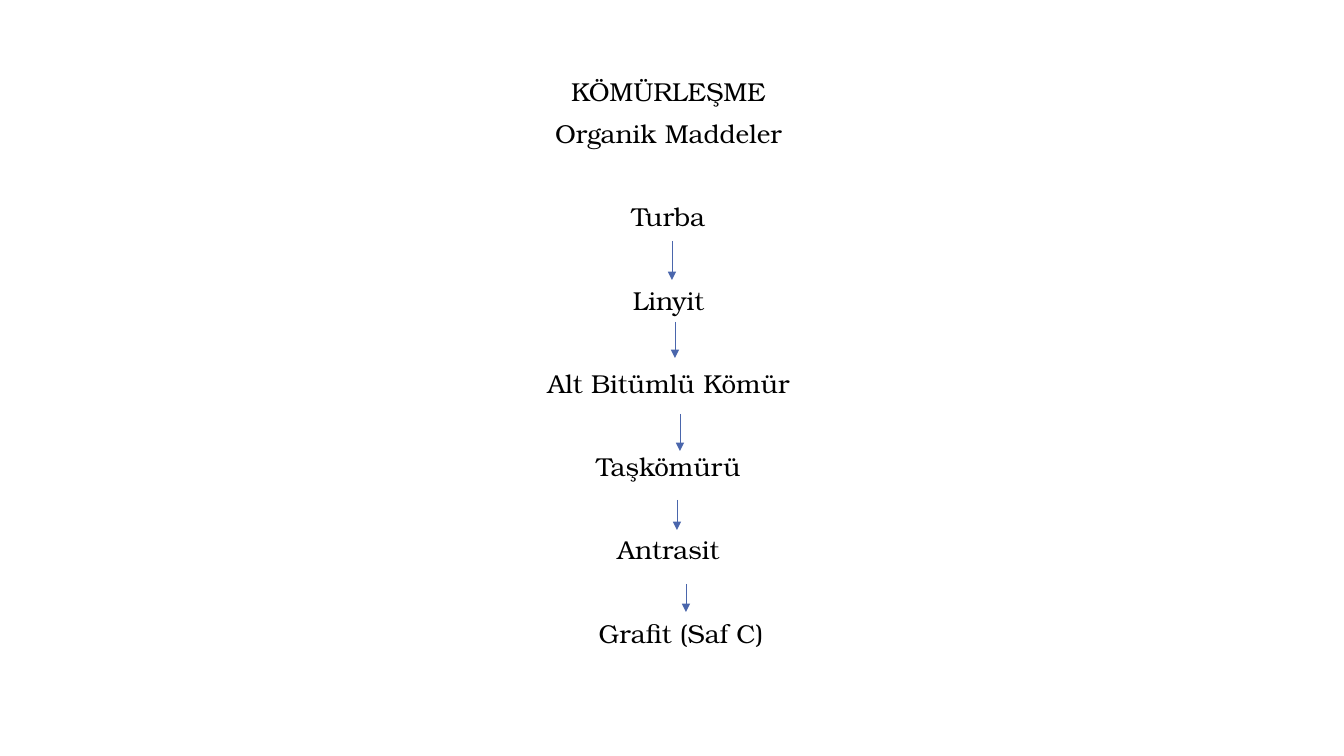
import pptx
import pptx.dml.color
import pptx.enum.shapes
import pptx.enum.text
import pptx.oxml
import pptx.oxml.ns
import pptx.util


def px(num):
    return pptx.util.Emu(round(num * 914400 / 100.8))


def hue(code):
    return pptx.dml.color.RGBColor.from_string(code)


class Deck:
    """Hold the style and the current slide, and draw each kind of element."""

    font = {"name": "TeX Gyre Bonum", "size": pptx.util.Pt(18.5)}
    para = {"alignment": pptx.enum.text.PP_ALIGN.CENTER, "line_spacing": 0.8}
    ink = "000000"
    blue = "4A66AC"

    def __init__(self, wide, high):
        self.show = pptx.Presentation()
        self.show.slide_width, self.show.slide_height = px(wide), px(high)
        self.slide = self.show.slides.add_slide(self.show.slide_layouts[6])

    def put(self, item, style):
        for key, value in style.items():
            setattr(item, key, value)

    def text(self, left, top, wide, high, rows):
        box = self.slide.shapes.add_textbox(px(left), px(top), px(wide), px(high))
        frame = box.text_frame
        frame.word_wrap = True
        for num, (words, gap, sides) in enumerate(rows):
            line = frame.add_paragraph() if num else frame.paragraphs[0]
            for side, size in sides.items():
                line._p.get_or_add_pPr().set(side, str(px(size)))
            self.put(line, self.para)
            line.space_before = pptx.util.Pt(gap)
            run = line.add_run()
            run.text = words
            self.put(run.font, self.font)
            run.font.color.rgb = hue(self.ink)

    def arrow(self, mid, top, end):
        kind = pptx.enum.shapes.MSO_CONNECTOR.STRAIGHT
        line = self.slide.shapes.add_connector(kind, px(mid), px(top), px(mid), px(end))
        line.line.color.rgb = hue(self.blue)
        line.line.width = pptx.util.Pt(0.5)
        space = pptx.oxml.ns.nsdecls("a")
        head = pptx.oxml.parse_xml(f'<a:tailEnd {space} type="triangle"/>')
        line.line._get_or_add_ln().append(head)
        line._element.spPr.append(pptx.oxml.parse_xml(f"<a:effectLst {space}/>"))


def main():
    deck = Deck(1344, 756)
    near, far = 12, 41.7
    deck.text(118, 77, 1109, 604, [
        ("KÖMÜRLEŞME", 0, {"marR": 8}),
        ("Organik Maddeler", near, {}),
        ("Turba", far, {}),
        ("Linyit", far, {}),
        ("Alt Bitümlü Kömür", far, {}),
        ("Taşkömürü", far, {}),
        ("Antrasit", far, {}),
        ("Grafit (Saf C)", far, {"marL": 25}),
    ])
    for mid, top, end in [
        (672, 241, 280),
        (675, 322, 358),
        (680, 414, 451),
        (677, 500, 530),
        (686, 584, 612),
    ]:
        deck.arrow(mid, top, end)
    deck.show.save("out.pptx")


if __name__ == "__main__":
    main()
